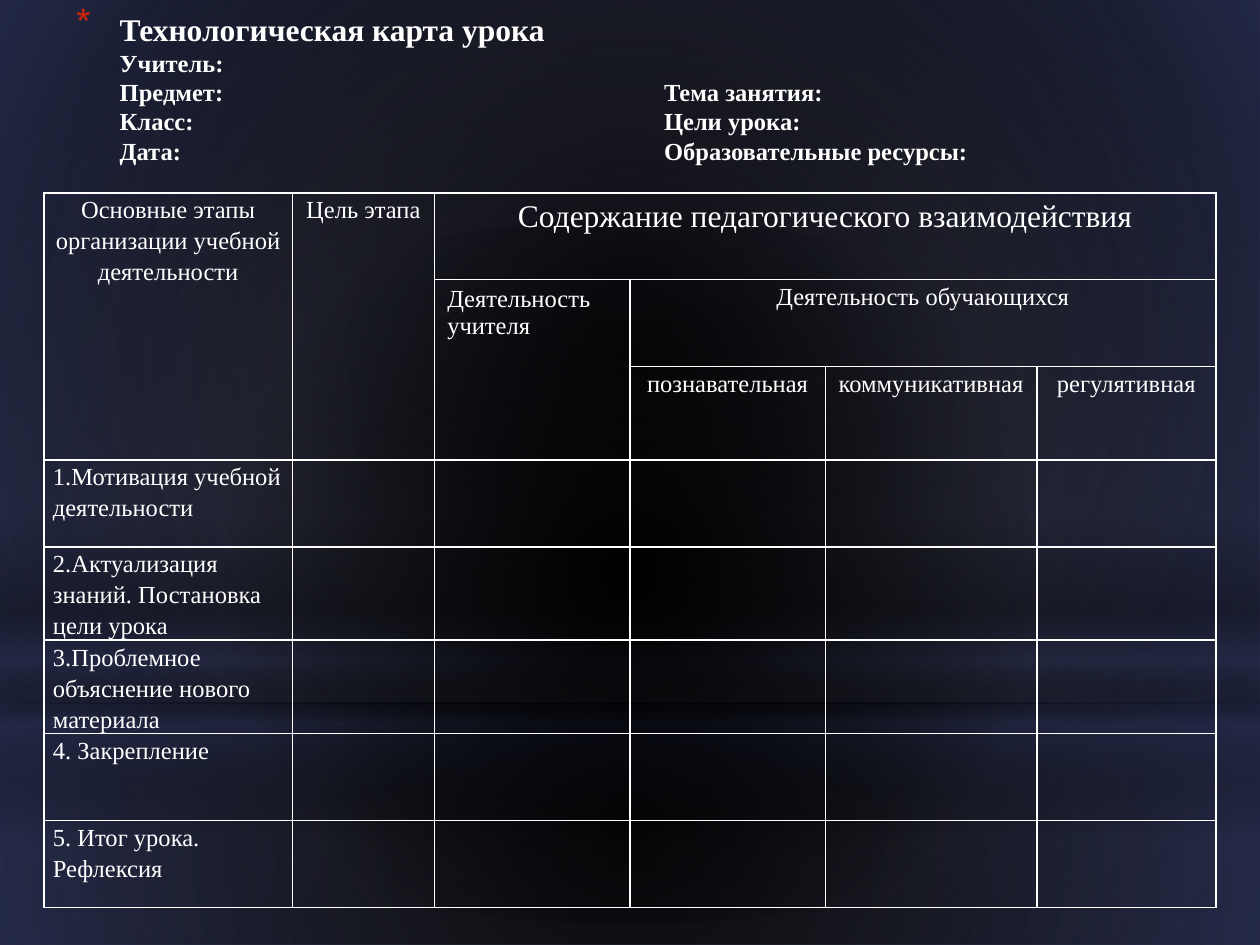
from lxml.etree import SubElement
from pptx import Presentation
from pptx.dml.color import RGBColor
from pptx.enum.shapes import MSO_SHAPE
from pptx.enum.text import MSO_ANCHOR, MSO_AUTO_SIZE, PP_ALIGN
from pptx.oxml import parse_xml
from pptx.oxml.ns import nsdecls, qn
from pptx.util import Inches, Pt

WHITE = RGBColor(0xFF, 0xFF, 0xFF)
RED = RGBColor(0xC3, 0x26, 0x0C)
FONT = "Times New Roman"
CENTER = (50, 50, 50, 50)

BACKGROUND = [(0, "7B7F9E", 100), (42, "5E6280", 100), (100, "2C304C", 100)]
BACKDROP = [
    (MSO_SHAPE.RECTANGLE, 5.58, 1.92, CENTER,
     [(0, "000000", 91), (37, "000000", 76), (100, "212745", 79)]),
    (MSO_SHAPE.RECTANGLE, 0, 5.58, CENTER,
     [(0, "000000", 89), (48, "000000", 62), (100, "212745", 79)]),
    (MSO_SHAPE.RECTANGLE, 4.12, 2.5, None,
     [(0, "000000", 0), (29, "000000", 30), (45, "212745", 40),
      (55, "000000", 26), (65, "212745", 60), (100, "000000", 0)]),
    (MSO_SHAPE.OVAL, 1.75, 5.58, CENTER,
     [(0, "000000", 100), (56, "000000", 0)]),
]

TITLE = [
    ("Технологическая карта урока", 18),
    ("Учитель:", 14),
    ("Предмет:\tТема занятия:", 14),
    ("Класс:\tЦели урока:", 14),
    ("Дата:\tОбразовательные ресурсы:", 14),
]

COLS = [1.97, 1.13, 1.55, 1.55, 1.68, 1.42]
ROW_H = 0.69
COMPACT = {"margin_left": Inches(0.07), "margin_right": Inches(0.07),
           "margin_top": 0, "margin_bottom": 0}
HEAD = (14, PP_ALIGN.CENTER, 1.15, COMPACT)
STAGE = (14, PP_ALIGN.LEFT, 1.15, COMPACT)
HEADERS = [
    (0, 0, 3, 1, "Основные этапы организации учебной деятельности", HEAD),
    (0, 1, 3, 1, "Цель этапа", HEAD),
    (0, 2, 1, 4, "Содержание педагогического взаимодействия",
     (18, PP_ALIGN.CENTER, 1.0, {})),
    (1, 2, 2, 1, "Деятельность учителя", (14, PP_ALIGN.LEFT, 1.0, {})),
    (1, 3, 1, 3, "Деятельность обучающихся", HEAD),
    (2, 3, 1, 1, "познавательная", HEAD),
    (2, 4, 1, 1, "коммуникативная", HEAD),
    (2, 5, 1, 1, "регулятивная", HEAD),
]
STAGES = [
    "1.Мотивация учебной деятельности",
    "2.Актуализация знаний. Постановка цели урока",
    "3.Проблемное объяснение нового материала",
    "4. Закрепление",
    "5. Итог урока. Рефлексия",
]
FIRST_STAGE = 3


def set_all(obj, values):
    for name, value in values.items():
        setattr(obj, name, value)


def set_gradient(fill, parent, stops, focus):
    fill.solid()
    gs = "".join(
        f'<a:gs pos="{pos * 1000}"><a:srgbClr val="{color}">'
        f'<a:alpha val="{alpha * 1000}"/></a:srgbClr></a:gs>'
        for pos, color, alpha in stops)
    if focus:
        rect = " ".join(f'{side}="{v * 1000}"' for side, v in zip("ltrb", focus))
        shade = f'<a:path path="circle"><a:fillToRect {rect}/></a:path>'
    else:
        shade = '<a:lin ang="5400000" scaled="0"/>'
    grad = parse_xml(f'<a:gradFill {nsdecls("a")} rotWithShape="1">'
                     f'<a:gsLst>{gs}</a:gsLst>{shade}</a:gradFill>')
    parent.replace(parent.find(qn("a:solidFill")), grad)


def format_run(r, size, bold=False):
    set_all(r.font, {"name": FONT, "size": Pt(size), "bold": bold})
    r.font.color.rgb = WHITE


def add_backdrop(s):
    fill = s.background.fill
    fill.solid()
    set_gradient(fill, s.element.find(".//" + qn("p:bgPr")),
                 BACKGROUND, (24, 44, 24, 12))
    for kind, top, height, focus, stops in BACKDROP:
        sp = s.shapes.add_shape(kind, 0, Inches(top), Inches(10), Inches(height))
        sp.shadow.inherit = False
        sp.line.fill.background()
        set_gradient(sp.fill, sp.element.spPr, stops, focus)


def fill_title(s):
    sp = s.shapes.title
    s.shapes.element.append(sp.element)
    set_all(sp, {"left": Inches(0.5), "top": 0,
                 "width": Inches(9), "height": Inches(1.39)})
    tf = sp.text_frame
    set_all(tf, {"word_wrap": True, "auto_size": MSO_AUTO_SIZE.NONE,
                 "vertical_anchor": MSO_ANCHOR.MIDDLE})
    p = tf.paragraphs[0]
    p.alignment = PP_ALIGN.LEFT
    for i, (text, size) in enumerate(TITLE):
        if i:
            p.add_line_break()
        r = p.add_run()
        r.text = text
        format_run(r, size, True)
    for br in p._p.findall(qn("a:br")):
        SubElement(br, qn("a:rPr"), sz="1400")
    pPr = p._p.get_or_add_pPr()
    pPr.set("marL", str(Inches(0.35)))
    pPr.set("indent", str(Inches(-0.35)))
    SubElement(SubElement(pPr, qn("a:buClr")), qn("a:srgbClr"), val=str(RED))
    SubElement(pPr, qn("a:buSzPct"), val="128000")
    SubElement(pPr, qn("a:buChar"), char="*")
    SubElement(SubElement(pPr, qn("a:tabLst")), qn("a:tab"),
               pos=str(Inches(4.67)), algn="l")


def set_borders(cell):
    tcPr = cell._tc.get_or_add_tcPr()
    for i, side in enumerate(("lnL", "lnR", "lnT", "lnB")):
        tcPr.insert(i, parse_xml(
            f'<a:{side} {nsdecls("a")} w="12700"><a:solidFill>'
            f'<a:srgbClr val="{WHITE}"/></a:solidFill></a:{side}>'))


def add_plan(s):
    rows = FIRST_STAGE + len(STAGES)
    table = s.shapes.add_table(rows, len(COLS), Inches(0.35), Inches(1.53),
                               Inches(sum(COLS)), Inches(ROW_H * rows)).table
    set_all(table, {"first_row": False, "horz_banding": False})
    for col, width in zip(table.columns, COLS):
        col.width = Inches(width)
    for row in table.rows:
        row.height = Inches(ROW_H)
    for cell in table.iter_cells():
        cell.fill.background()
        set_borders(cell)
    stages = [(FIRST_STAGE + i, 0, 1, 1, text, STAGE)
              for i, text in enumerate(STAGES)]
    for row, col, down, across, text, style in HEADERS + stages:
        size, align, spacing, margins = style
        cell = table.cell(row, col)
        if down * across > 1:
            cell.merge(table.cell(row + down - 1, col + across - 1))
        set_all(cell, margins)
        p = cell.text_frame.paragraphs[0]
        set_all(p, {"alignment": align, "line_spacing": spacing})
        r = p.add_run()
        r.text = text
        format_run(r, size)


def main():
    prs = Presentation()
    set_all(prs, {"slide_width": Inches(10), "slide_height": Inches(7.5)})
    s = prs.slides.add_slide(prs.slide_layouts[5])
    add_backdrop(s)
    fill_title(s)
    add_plan(s)
    prs.save("out.pptx")


if __name__ == "__main__":
    main()
